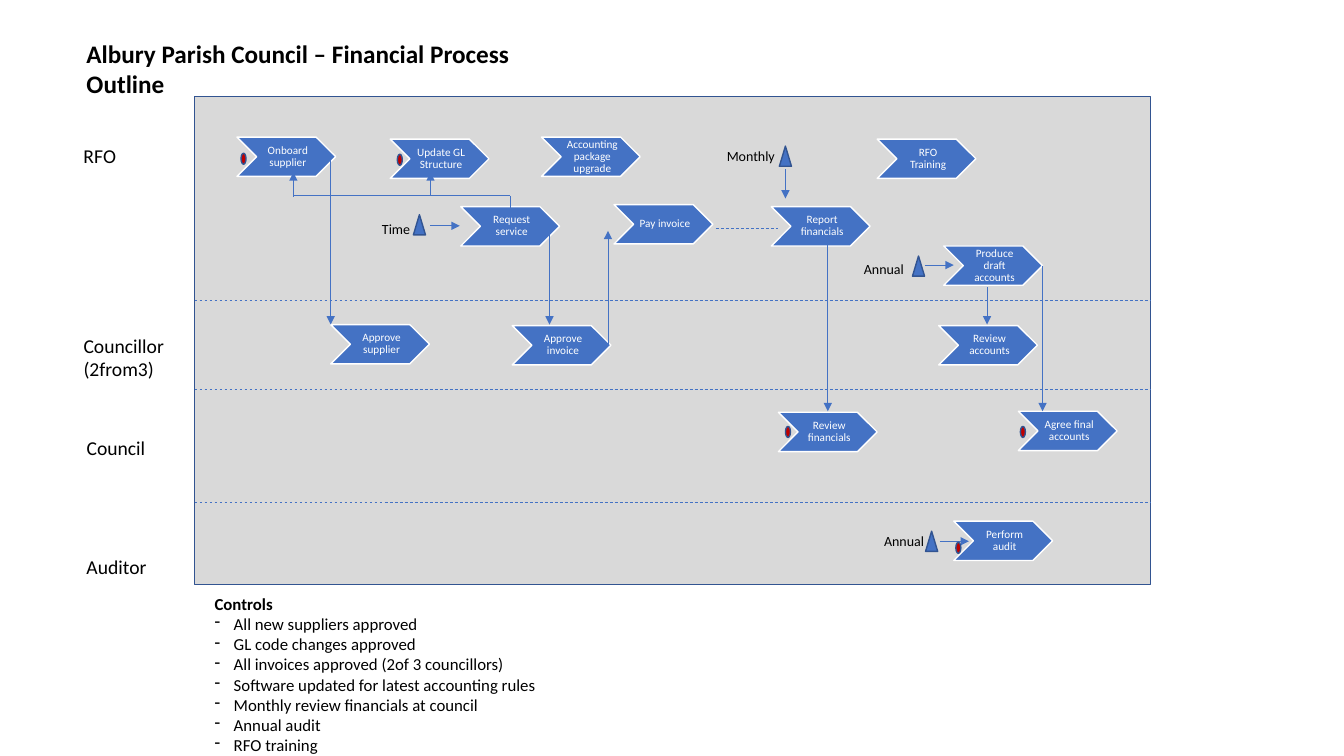
"""Build a swimlane slide of a parish council's financial process."""
from lxml import etree
from pptx import Presentation
from pptx.dml.color import RGBColor
from pptx.enum.dml import MSO_LINE
from pptx.enum.shapes import MSO_CONNECTOR, MSO_SHAPE
from pptx.enum.text import MSO_ANCHOR, PP_ALIGN
from pptx.oxml.ns import qn
from pptx.util import Inches, Pt

CHEVRON, RECTANGLE = MSO_SHAPE.CHEVRON, MSO_SHAPE.RECTANGLE
TRIANGLE, OVAL = MSO_SHAPE.ISOSCELES_TRIANGLE, MSO_SHAPE.OVAL
STRAIGHT, DASH = MSO_CONNECTOR.STRAIGHT, MSO_LINE.DASH
MIDDLE, CENTER, LEFT = MSO_ANCHOR.MIDDLE, PP_ALIGN.CENTER, PP_ALIGN.LEFT
RIGHT_SIDE = 3

BLUE = RGBColor(0x44, 0x72, 0xC4)
DARK_BLUE = RGBColor(0x32, 0x54, 0x91)
GREY = RGBColor(0xD9, 0xD9, 0xD9)
RED = RGBColor(0xC0, 0x00, 0x00)
WHITE = RGBColor(0xFF, 0xFF, 0xFF)
BLACK = RGBColor(0x00, 0x00, 0x00)

FONT = "Calibri"
CELL = Inches(0.1)
STEP_SIZE = (9.8, 3.9)
TRIGGER_SIZE = (1.2, 2)
CONTROL_SIZE = (0.5, 1.1)
PANEL_LEFT, PANEL_RIGHT, PANEL_TOP, PANEL_HEIGHT = 19.3, 114.1, 9.6, 48.4
LANE_BORDERS = [29.8, 38.6, 49.8]

STEPS = [
    ("Onboard supplier", 23.5, 13.6),
    ("Update GL Structure", 38.7, 13.8),
    ("Accounting package upgrade", 53.7, 13.6),
    ("RFO Training", 87, 13.8),
    ("Request service", 45.7, 20.5),
    ("Pay invoice", 60.9, 20.3),
    ("Report financials", 76.5, 20.5),
    ("Produce draft accounts", 93.6, 24.4),
    ("Approve supplier", 32.8, 32.2),
    ("Approve invoice", 50.8, 32.3),
    ("Review accounts", 93.1, 32.3),
    ("Review financials", 77.2, 40.9),
    ("Agree final accounts", 101, 40.8),
    ("Perform audit", 94.6, 51.7),
]
TRIGGERS = [(90.5, 25.4), (91.8, 52.7), (77.3, 14.5), (41, 21.3)]
CONTROLS = [(23.9, 15.2), (39.4, 15.3), (94.8, 53.8), (77.9, 42.3), (101.2, 42.3)]
ARROWS = [
    (91.7, 26.3, 94.6, 26.3),
    (97.9, 28.5, 97.9, 32.2),
    (93.2, 53.7, 96.1, 53.7),
    (29.1, 19.5, 29.1, 17.1),
    (32.8, 15.5, 32.8, 32.2),
    (42.7, 19.4, 42.7, 17.1),
    (54.5, 22.7, 54.5, 32.2),
    (60.3, 34.2, 60.3, 22.9),
    (82.1, 23.8, 82.1, 40.8),
    (77.9, 16.8, 77.9, 19.7),
    (42.7, 22.4, 45.6, 22.4),
]
PLAIN_LINES = [(50.6, 19.4, 29.1, 19.4), (50.6, 20.7, 50.6, 19.4)]
DASHED_LINES = [(71, 22.7, 77.2, 22.7)] + [
    (PANEL_LEFT, border, PANEL_RIGHT, border) for border in LANE_BORDERS
]
LANE_LABELS = [
    (["RFO"], 7.3, 13.8, 5.3, 3.4),
    (["Councillor", "(2from3)"], 7.3, 32.6, 10.5, 5.7),
    (["Council"], 7.6, 42.8, 7.9, 3.4),
    (["Auditor"], 7.6, 54.6, 8, 3.4),
]
TRIGGER_LABELS = [
    (["Time"], 36.9, 21.4, 4.8, 2.7),
    (["Annual"], 84.7, 25.4, 6, 2.7),
    (["Monthly"], 71.1, 14.1, 6.8, 2.7),
    (["Annual"], 86.7, 52.3, 6, 2.7),
]
CONTROL_LIST = [
    "All new suppliers approved",
    "GL code changes approved",
    "All invoices approved (2of 3 councillors)",
    "Software updated for latest accounting rules",
    "Monthly review financials at council",
    "Annual audit",
    "RFO training",
]


def cells(*counts):
    """Turn counts of grid cells into lengths."""
    return [round(count * CELL) for count in counts]


def add_run(paragraph, text, size, color, bold=False):
    """Add one formatted run to a paragraph."""
    run = paragraph.add_run()
    run.text = text
    run.font.name, run.font.size, run.font.bold = FONT, Pt(size), bold
    run.font.color.rgb = color


def add_box(slide, kind, left, top, size, fill, outline):
    """Add a filled preset shape with a thin outline."""
    shape = slide.shapes.add_shape(kind, *cells(left, top, *size))
    shape.shadow.inherit = False
    shape.fill.solid()
    shape.fill.fore_color.rgb = fill
    shape.line.color.rgb = outline
    shape.line.width = Pt(1)
    return shape


def add_step(slide, text, left, top):
    """Add a process chevron with its label."""
    shape = add_box(slide, CHEVRON, left, top, STEP_SIZE, BLUE, WHITE)
    frame = shape.text_frame
    frame.word_wrap = True
    frame.vertical_anchor = MIDDLE
    frame.margin_left = Inches(0.04)
    frame.margin_top = frame.margin_right = frame.margin_bottom = Inches(0.01)
    paragraph = frame.paragraphs[0]
    paragraph.alignment = CENTER
    paragraph.line_spacing = 0.9
    add_run(paragraph, text, 8, WHITE)
    return shape


def add_line(slide, ends, arrow=False, dashed=False):
    """Add a thin straight connector, with an arrowhead or dashes if asked."""
    line = slide.shapes.add_connector(STRAIGHT, *cells(*ends))
    line.line.color.rgb = BLUE
    line.line.width = Pt(0.5)
    if dashed:
        line.line.dash_style = DASH
    if arrow:
        outline = line.line._get_or_add_ln()
        etree.SubElement(outline, qn("a:tailEnd"), type="triangle")
    etree.SubElement(line._element.spPr, qn("a:effectLst"))
    return line


def add_text(slide, lines, left, top, width, height, size, bold=False, wrap=False):
    """Add a text box with one paragraph per line."""
    box = slide.shapes.add_textbox(*cells(left, top, width, height))
    frame = box.text_frame
    frame.word_wrap = wrap
    for index, text in enumerate(lines):
        paragraph = frame.add_paragraph() if index else frame.paragraphs[0]
        paragraph.alignment = LEFT
        add_run(paragraph, text, size, BLACK, bold)
    return frame


def add_dash_bullets(frame, items, size):
    """Append items with hanging dash bullets to a text frame."""
    indent = Inches(0.19)
    for text in items:
        paragraph = frame.add_paragraph()
        add_run(paragraph, text, size, BLACK)
        properties = paragraph._p.get_or_add_pPr()
        properties.set("marL", str(indent))
        properties.set("indent", str(-indent))
        etree.SubElement(properties, qn("a:buChar"), char="-")


def main():
    """Draw the slide and save it."""
    presentation = Presentation()
    presentation.slide_width, presentation.slide_height = Inches(13.33), Inches(7.5)
    slide = presentation.slides.add_slide(presentation.slide_layouts[6])
    panel_size = (PANEL_RIGHT - PANEL_LEFT, PANEL_HEIGHT)
    add_box(slide, RECTANGLE, PANEL_LEFT, PANEL_TOP, panel_size, GREY, DARK_BLUE)
    steps = {text: add_step(slide, text, left, top) for text, left, top in STEPS}
    for left, top in TRIGGERS:
        add_box(slide, TRIANGLE, left, top, TRIGGER_SIZE, BLUE, DARK_BLUE)
    for ends in ARROWS:
        add_line(slide, ends, arrow=True)
    for ends in PLAIN_LINES:
        add_line(slide, ends)
    for ends in DASHED_LINES:
        add_line(slide, ends, dashed=True)
    agreement = add_line(slide, (103.4, 26.3, 103.4, 40.8), arrow=True)
    agreement.begin_connect(steps["Produce draft accounts"], RIGHT_SIDE)
    for left, top in CONTROLS:
        add_box(slide, OVAL, left, top, CONTROL_SIZE, RED, DARK_BLUE)
    title = "Albury Parish Council – Financial Process Outline"
    add_text(slide, [title], 7.6, 3.3, 50, 7, 18, bold=True, wrap=True)
    for label in LANE_LABELS:
        add_text(slide, *label, size=14)
    for label in TRIGGER_LABELS:
        add_text(slide, *label, size=10)
    controls = add_text(slide, ["Controls"], 20.3, 58.4, 36, 17.2, 12, bold=True, wrap=True)
    add_dash_bullets(controls, CONTROL_LIST, 12)
    presentation.save("out.pptx")


if __name__ == "__main__":
    main()
